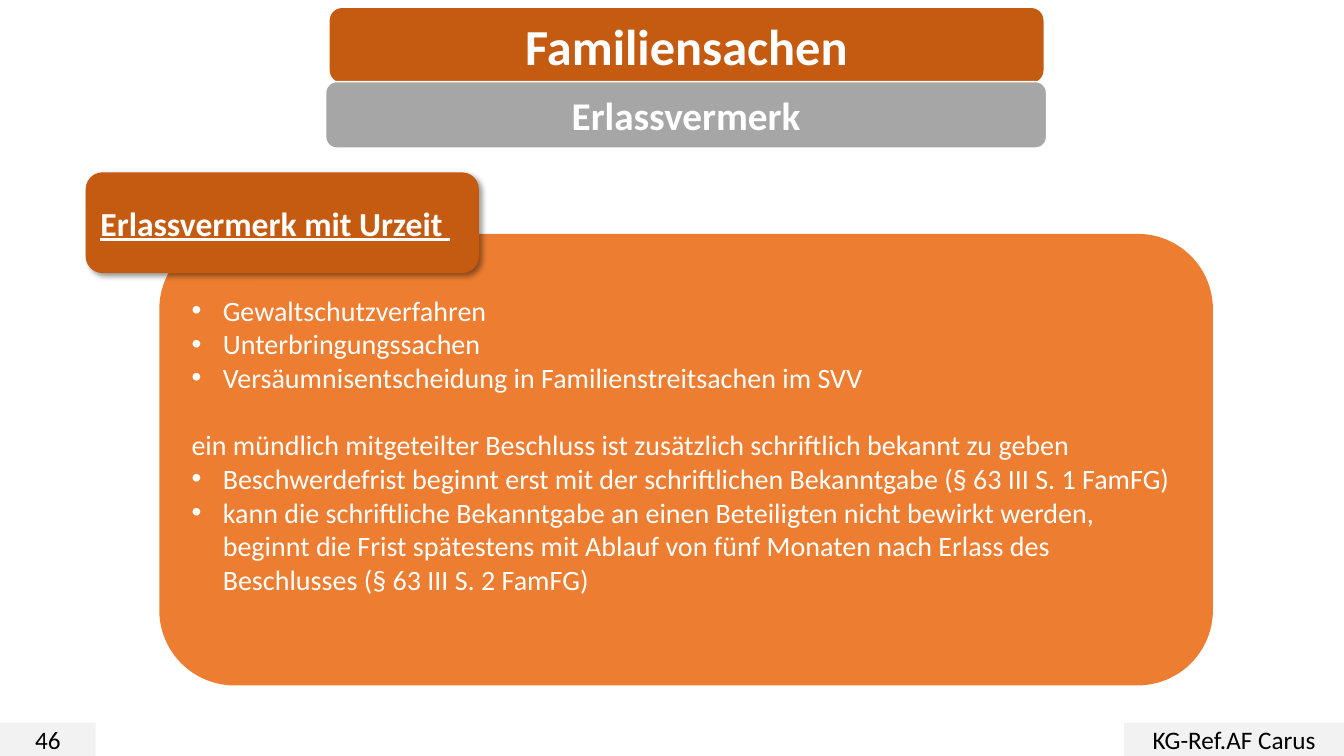
from lxml.etree import SubElement
from pptx import Presentation
from pptx.dml.color import RGBColor
from pptx.enum.shapes import MSO_SHAPE as Preset
from pptx.enum.text import MSO_ANCHOR as Anchor, MSO_AUTO_SIZE as AutoSize, PP_ALIGN as Align
from pptx.oxml.ns import qn
from pptx.util import Inches, Pt

THEME = {
    "font": "Calibri",
    "rust": "C55A11", "orange": "ED7D31", "grey": "A6A6A6", "pale": "F2F2F2",
    "white": "FFFFFF", "black": "000000",
    "title": 36, "subtitle": 28, "tag": 24, "body": 20, "footer": 18,
}

TITLE = "Familiensachen"
SUBTITLE = "Erlassvermerk"
TAG = "Erlassvermerk mit Urzeit "
PAGE = "46"
AUTHOR = "KG-Ref.AF Carus"
CASES = [
    "Gewaltschutzverfahren",
    "Unterbringungssachen",
    "Versäumnisentscheidung in Familienstreitsachen im SVV",
]
RULE = "ein mündlich mitgeteilter Beschluss ist zusätzlich schriftlich bekannt zu geben"
DEADLINES = [
    "Beschwerdefrist beginnt erst mit der schriftlichen Bekanntgabe (§ 63 III S. 1 FamFG)",
    "kann die schriftliche Bekanntgabe an einen Beteiligten nicht bewirkt werden, "
    "beginnt die Frist spätestens mit Ablauf von fünf Monaten nach Erlass des "
    "Beschlusses (§ 63 III S. 2 FamFG)",
]

SLIDE_W, SLIDE_H = 13.33, 7.5
FOOTER_H = 0.33
FOOTER_Y = SLIDE_H - FOOTER_H
AUTHOR_W = 2.18
TITLE_BOX = (3.27, 0.08, 7.08, 0.74)
SUBTITLE_BOX = (3.23, 0.81, 7.15, 0.66)
PANEL_BOX = (1.58, 2.32, 10.45, 4.48)
TAG_BOX = (0.85, 1.71, 3.9, 1)
PANEL_PAD_X, PANEL_PAD_TOP = 0.32, 0.59
BULLET_INDENT = 0.31


def color(name):
    return RGBColor.from_string(THEME[name])


def apply(target, values):
    for name, value in values.items():
        setattr(target, name, value)


def add_box(slide, preset, box, fill, line=None):
    shape = slide.shapes.add_shape(preset, *map(Inches, box))
    shape.shadow.inherit = False
    shape.fill.solid()
    shape.fill.fore_color.rgb = color(fill)
    if line:
        shape.line.color.rgb = color(line)
        shape.line.width = Pt(1)
    else:
        shape.line.fill.background()
    return shape


def write(paragraph, text, size, ink="white", align=Align.CENTER, before=0, **style):
    apply(paragraph, {"alignment": align, "line_spacing": 1.0,
                      "space_before": Pt(before), "space_after": Pt(0)})
    run = paragraph.add_run()
    run.text = text
    apply(run.font, {"name": THEME["font"], "size": Pt(THEME[size]), **style})
    run.font.color.rgb = color(ink)


def label(shape, text, size, **style):
    shape.text_frame.vertical_anchor = Anchor.MIDDLE
    write(shape.text_frame.paragraphs[0], text, size, **style)


def place(placeholder, box):
    """Put the placeholder in the box, above everything drawn so far."""
    sides = ("left", "top", "width", "height")
    apply(placeholder, dict(zip(sides, map(Inches, box))))
    margins = ("margin_left", "margin_top", "margin_right", "margin_bottom")
    apply(placeholder.text_frame, {
        **dict.fromkeys(margins, 0), "word_wrap": True, "auto_size": AutoSize.NONE})
    element = placeholder._element
    element.getparent().append(element)


def set_bullet(paragraph, bulleted):
    props = paragraph._p.get_or_add_pPr()
    indent = Inches(BULLET_INDENT) if bulleted else 0
    props.set("marL", str(indent))
    props.set("indent", str(-indent))
    if bulleted:
        SubElement(props, qn("a:buFont"), typeface="Arial")
        SubElement(props, qn("a:buChar"), char="•")
    else:
        SubElement(props, qn("a:buNone"))


def cast_shadow(shape):
    effects = shape._element.spPr.find(qn("a:effectLst"))
    shadow = SubElement(effects, qn("a:outerShdw"), blurRad=str(Pt(4)), dist=str(Pt(3)),
                        dir="2700000", algn="tl", rotWithShape="0")
    ink = SubElement(shadow, qn("a:srgbClr"), val=THEME["black"])
    SubElement(ink, qn("a:alpha"), val="40000")


def add_headings(slide):
    add_box(slide, Preset.ROUNDED_RECTANGLE, TITLE_BOX, "rust")
    place(slide.shapes.title, TITLE_BOX)
    label(slide.shapes.title, TITLE, "title", bold=True)
    subtitle = add_box(slide, Preset.ROUNDED_RECTANGLE, SUBTITLE_BOX, "grey", "white")
    label(subtitle, SUBTITLE, "subtitle", bold=True)


def add_footer(slide):
    for text, left, width in ((PAGE, 0, 0.95), (AUTHOR, SLIDE_W - AUTHOR_W, AUTHOR_W)):
        strip = add_box(slide, Preset.RECTANGLE, (left, FOOTER_Y, width, FOOTER_H), "pale")
        label(strip, text, "footer", ink="black")


def add_panel(slide):
    add_box(slide, Preset.ROUNDED_RECTANGLE, PANEL_BOX, "orange")
    left, top, width, height = PANEL_BOX
    body = slide.placeholders[1]
    place(body, (left + PANEL_PAD_X, top + PANEL_PAD_TOP,
                 width - 2 * PANEL_PAD_X, height - 2 * PANEL_PAD_TOP))
    frame = body.text_frame
    frame.vertical_anchor = Anchor.TOP
    for index, text in enumerate([*CASES, RULE, *DEADLINES]):
        paragraph = frame.add_paragraph() if index else frame.paragraphs[0]
        is_rule = text == RULE
        write(paragraph, text, "body", align=Align.LEFT, before=24 if is_rule else 0)
        set_bullet(paragraph, not is_rule)


def add_tag(slide):
    tag = add_box(slide, Preset.ROUNDED_RECTANGLE, TAG_BOX, "rust")
    cast_shadow(tag)
    label(tag, TAG, "tag", align=Align.LEFT, bold=True, underline=True)


def main():
    deck = Presentation()
    apply(deck, {"slide_width": Inches(SLIDE_W), "slide_height": Inches(SLIDE_H)})
    slide = deck.slides.add_slide(deck.slide_layouts[1])
    for add_part in (add_headings, add_footer, add_panel, add_tag):
        add_part(slide)
    deck.save("out.pptx")


if __name__ == "__main__":
    main()
